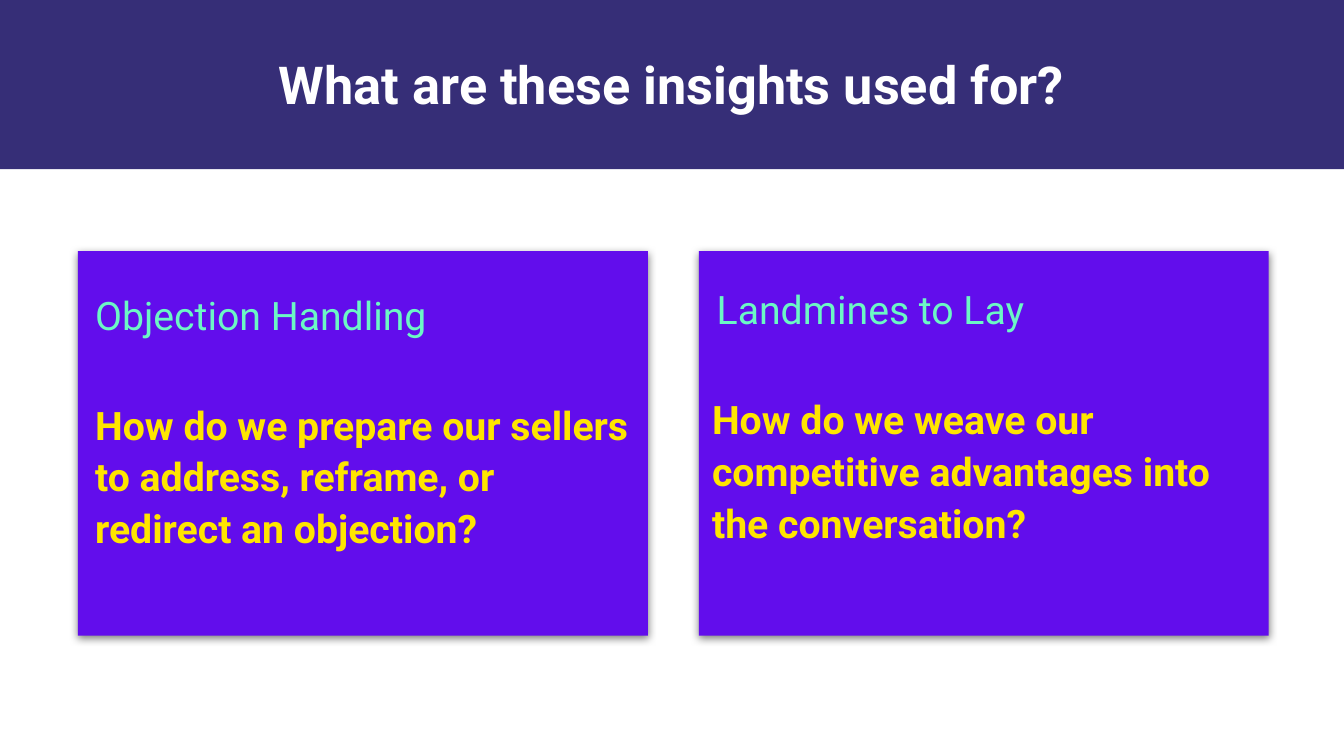
from lxml.etree import SubElement
from pptx import Presentation
from pptx.dml.color import RGBColor
from pptx.enum.shapes import MSO_SHAPE as Shape
from pptx.enum.text import MSO_ANCHOR as Anchor, PP_ALIGN as Align
from pptx.oxml.ns import qn
from pptx.util import Pt

COLOURS = {
    "navy": "362E77",
    "white": "FFFFFF",
    "violet": "620DEC",
    "mint": "6CF7C5",
    "yellow": "FFE500",
    "black": "000000",
}
FONT = "Roboto"
PAGE_WIDTH, PAGE_HEIGHT = 720, 405
CARD_TOP, CARD_WIDTH, CARD_HEIGHT = 134.6, 305.3, 206


def colour(name):
    return RGBColor.from_string(COLOURS[name])


def add_rectangle(page, left, top, width, height, fill):
    shape = page.shapes.add_shape(
        Shape.RECTANGLE, Pt(left), Pt(top), Pt(width), Pt(height))
    shape.shadow.inherit = False
    shape.fill.solid()
    shape.fill.fore_color.rgb = colour(fill)
    shape.line.fill.background()
    return shape


def add_shadow(shape):
    effects = shape.element.spPr.find(qn("a:effectLst"))
    shadow = SubElement(
        effects, qn("a:outerShdw"), blurRad=str(Pt(4.5)), dist=str(Pt(1.5)),
        dir="5400000", algn="bl", rotWithShape="0")
    tint = SubElement(shadow, qn("a:srgbClr"), val=COLOURS["black"])
    SubElement(tint, qn("a:alpha"), val="50000")


def add_text(page, left, top, width, height, text, size, ink,
             bold=False, align=Align.LEFT, spacing=1.1):
    box = page.shapes.add_textbox(Pt(left), Pt(top), Pt(width), Pt(height))
    frame = box.text_frame
    frame.word_wrap = True
    frame.vertical_anchor = Anchor.TOP
    frame.margin_left = frame.margin_right = Pt(7.2)
    frame.margin_top = frame.margin_bottom = Pt(7.2)
    para = frame.paragraphs[0]
    para.text = text
    para.alignment = align
    para.line_spacing = spacing
    para.font.name = FONT
    para.font.size = Pt(size)
    para.font.bold = bold
    para.font.color.rgb = colour(ink)


def add_card(page, left, heading, heading_at, question, question_at):
    card = add_rectangle(page, left, CARD_TOP, CARD_WIDTH, CARD_HEIGHT, "violet")
    add_shadow(card)
    add_text(page, *heading_at, 263, 40.3, heading, 21, "mint")
    add_text(page, *question_at, 304.5, 95.8, question, 21, "yellow", bold=True)


def main():
    deck = Presentation()
    deck.slide_width, deck.slide_height = Pt(PAGE_WIDTH), Pt(PAGE_HEIGHT)
    page = deck.slides.add_slide(deck.slide_layouts[6])
    page.background.fill.solid()
    page.background.fill.fore_color.rgb = colour("navy")

    add_rectangle(page, 0, 0, PAGE_WIDTH, PAGE_HEIGHT, "white")
    add_rectangle(page, 0, 0, PAGE_WIDTH, 90.6, "navy")
    add_text(page, 71.3, 20.9, 576.7, 56.9, "What are these insights used for?",
             28, "white", bold=True, align=Align.CENTER, spacing=1)

    add_card(page, 41.8, "Objection Handling", (43.9, 146.2),
             "How do we prepare our sellers to address, reframe, "
             "or redirect an objection?", (43.9, 205.2))
    add_card(page, 374.4, "Landmines to Lay", (376.9, 143.3),
             "How do we weave our competitive advantages "
             "into the conversation?", (374.4, 202.3))

    deck.save("out.pptx")


if __name__ == "__main__":
    main()
